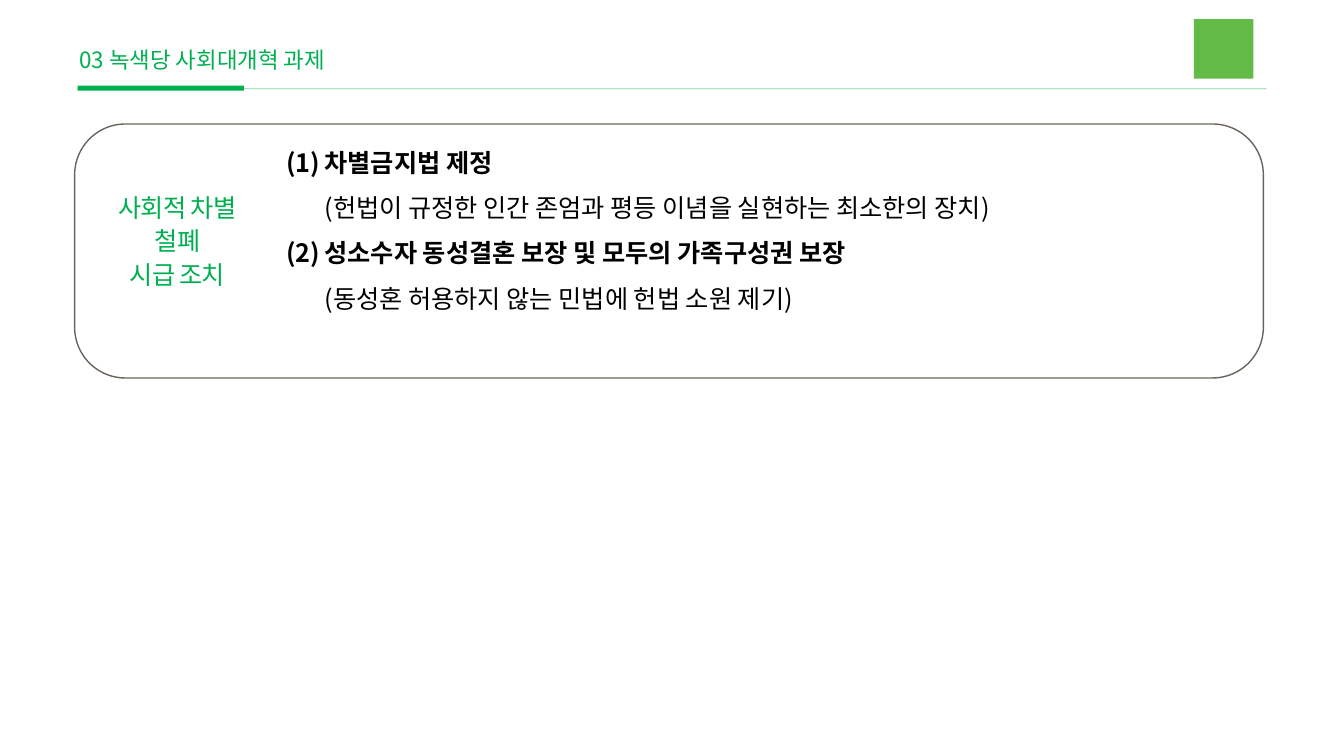
from lxml.etree import SubElement
from pptx import Presentation
from pptx.dml.color import RGBColor
from pptx.enum.shapes import MSO_CONNECTOR, MSO_SHAPE
from pptx.enum.text import PP_ALIGN
from pptx.oxml.ns import qn
from pptx.util import Pt

PX = 9144  # 100 px to the inch
FONT = "Noto Sans CJK KR"
COLORS = {"green": "00B050", "emblem": "62BB46", "frame": "6B645C", "text": "000000"}


def px(n):
    return int(n * PX)


def color(name):
    return RGBColor.from_string(COLORS[name])


def add_box(s, kind, x, y, w, h, fill=None, line=None):
    sp = s.shapes.add_shape(kind, px(x), px(y), px(w), px(h))
    sp.shadow.inherit = False
    if fill:
        sp.fill.solid()
        sp.fill.fore_color.rgb = color(fill)
    else:
        sp.fill.background()
    if line:
        sp.line.color.rgb = color(line)
        sp.line.width = Pt(1)
    else:
        sp.line.fill.background()
    return sp


def add_text(s, x, y, w, h, text):
    tf = s.shapes.add_textbox(px(x), px(y), px(w), px(h)).text_frame
    tf.word_wrap = True
    tf.text = text
    return tf


def style(r, size, fill, bold=False, spacing=None):
    r.font.size = Pt(size)
    r.font.bold = bold
    r.font.color.rgb = color(fill)
    r.font.name = FONT
    rPr = r.font._element
    SubElement(rPr, qn("a:ea")).set("typeface", FONT)
    if spacing is not None:
        rPr.set("spc", str(int(spacing * 100)))


def add_header(s, x, y, w, title):
    # Thin rule with a thick start
    rule = s.shapes.add_connector(MSO_CONNECTOR.STRAIGHT, px(x), px(y), px(x + w), px(y))
    rule.line.color.rgb = color("green")
    rule.line.width = Pt(0.5)
    srgb = rule.line._ln.find(".//" + qn("a:srgbClr"))
    SubElement(srgb, qn("a:alpha")).set("val", "50000")
    SubElement(rule._element.spPr, qn("a:effectLst"))
    add_box(s, MSO_SHAPE.RECTANGLE, x, y - 3, 165, 5, fill="green")

    # Emblem block and title
    add_box(s, MSO_SHAPE.RECTANGLE, x + w - 72, y - 69, 59, 59, fill="emblem")
    tf = add_text(s, x - 8, y - 47, 576, 40, title)
    style(tf.paragraphs[0].runs[0], 16, "green")


def add_panel(s, x, y, w, h, label, measures):
    frame = add_box(s, MSO_SHAPE.ROUNDED_RECTANGLE, x, y, w, h, line="frame")
    frame.adjustments[0] = 0.2

    # Label on the left
    tf = add_text(s, x + 21, y + 60, 162, 108, "\n".join(label))
    for p in tf.paragraphs:
        p.alignment = PP_ALIGN.CENTER
        p.line_spacing = 1.1
        style(p.runs[0], 18, "green", spacing=-0.5)

    # Numbered measures, each with a note on its own line
    text = "\n".join(f"{name}\v{note}" for name, note in measures)
    tf = add_text(s, x + 200, y + 3, 949, 192, text)
    for p in tf.paragraphs:
        pPr = p._p.get_or_add_pPr()
        pPr.set("marL", str(px(38)))
        pPr.set("indent", str(px(-38)))
        SubElement(pPr, qn("a:buFont")).set("typeface", "+mj-lt")
        SubElement(pPr, qn("a:buAutoNum")).set("type", "arabicParenBoth")
        p.line_spacing = 1.5
        name, note = p.runs
        style(name, 18, "text", bold=True)
        style(note, 18, "text")


def main():
    prs = Presentation()
    prs.slide_width, prs.slide_height = px(1333), px(750)
    s = prs.slides.add_slide(prs.slide_layouts[6])
    add_header(s, 77, 88, 1179, "03 녹색당 사회대개혁 과제")
    add_panel(
        s, 74, 123, 1179, 252,
        ["사회적 차별", "철폐", "시급 조치"],
        [
            ("차별금지법 제정", "(헌법이 규정한 인간 존엄과 평등 이념을 실현하는 최소한의 장치)"),
            ("성소수자 동성결혼 보장 및 모두의 가족구성권 보장", "(동성혼 허용하지 않는 민법에 헌법 소원 제기)"),
        ],
    )
    prs.save("out.pptx")


if __name__ == "__main__":
    main()
